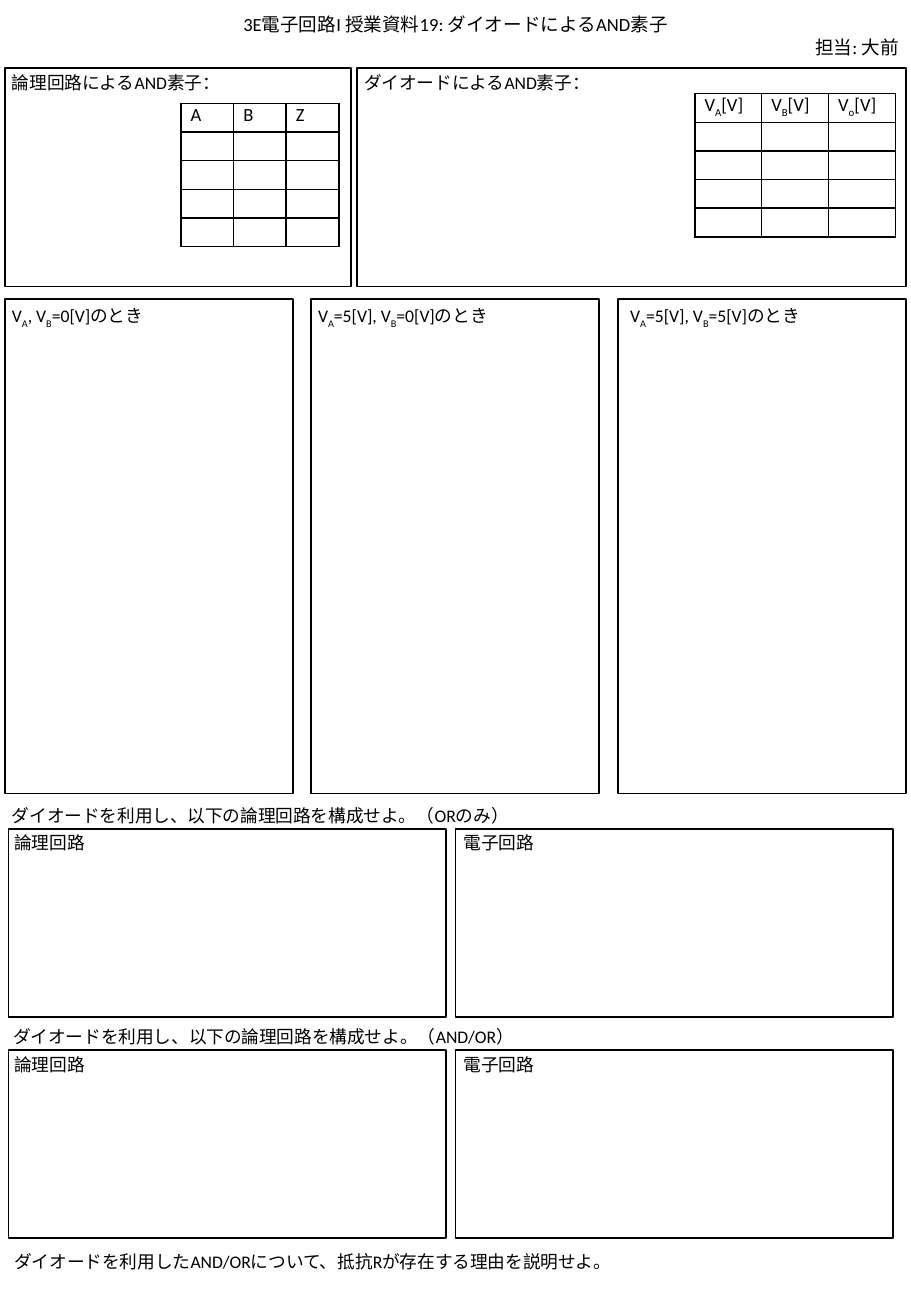
from lxml.etree import SubElement
from pptx import Presentation
from pptx.dml.color import RGBColor
from pptx.enum.shapes import MSO_SHAPE as Shape
from pptx.enum.text import MSO_ANCHOR as Anchor, MSO_AUTO_SIZE as Fit, PP_ALIGN as Align
from pptx.oxml.ns import qn
from pptx.util import Inches, Pt

WIDE, HIGH = 7.5, 10.83
FONT, INK, PAPER = "Calibri", "000000", "FFFFFF"

# Text between bars is subscript.
TITLE = ["3E電子回路I 授業資料19: ダイオードによるAND素子", "担当: 大前"]
# Panels: left, width, label, label left
GATES = [
    (0.04, 2.85, "論理回路によるAND素子：", 0),
    (2.94, 4.52, "ダイオードによるAND素子：", 2.9),
]
CASES = [
    (0.04, 2.37, "V|A|, V|B|=0[V]のとき", 0),
    (2.56, 2.37, "V|A|=5[V], V|B|=0[V]のとき", 2.52),
    (5.09, 2.37, "V|A|=5[V], V|B|=5[V]のとき", 5.09),
]
TASK = [
    (0.07, 3.6, "論理回路", 0.02),
    (3.75, 3.6, "電子回路", 3.72),
]
# Rows of panels: top, height, label top, panels
BANDS = [
    (0.56, 1.8, 0.54, GATES),
    (2.46, 4.07, 2.46, CASES),
    (6.82, 1.55, 6.8, TASK),
    (8.64, 1.55, 8.62, TASK),
]
# Questions: left, top, width, text
ASKS = [
    (0, 6.57, 4.69, "ダイオードを利用し、以下の論理回路を構成せよ。（ORのみ）"),
    (0.01, 8.39, 4.69, "ダイオードを利用し、以下の論理回路を構成せよ。（AND/OR）"),
    (0.02, 10.24, 6.38, "ダイオードを利用したAND/ORについて、抵抗Rが存在する理由を説明せよ。"),
]
# Truth tables: left, top, width, heads
TABLES = [
    (1.49, 0.85, 1.3, ["A", "B", "Z"]),
    (5.72, 0.77, 1.65, ["V|A|[V]", "V|B|[V]", "V|o|[V]"]),
]
ROWS, ROW_H = 5, 0.236


def color(text):
    return RGBColor.from_string(text)


def write(para, text, size=10.5, align=Align.LEFT):
    para.alignment = align
    for i, part in enumerate(text.split("|")):
        run = para.add_run()
        run.text = part
        font = run.font
        font.name, font.size = FONT, Pt(size)
        font.color.rgb = color(INK)
        if i % 2:
            font._element.set("baseline", "-25000")


def label(slide, x, y, w, text):
    box = slide.shapes.add_textbox(*map(Inches, (x, y, w, 0.28)))
    frame = box.text_frame
    frame.word_wrap = True
    frame.auto_size = Fit.SHAPE_TO_FIT_TEXT
    write(frame.paragraphs[0], text)


def panel(slide, x, y, w, h):
    box = slide.shapes.add_shape(Shape.RECTANGLE, *map(Inches, (x, y, w, h)))
    box.shadow.inherit = False
    box.fill.solid()
    box.fill.fore_color.rgb = color(PAPER)
    box.line.color.rgb = color(INK)
    box.line.width = Pt(1)


def border(cell):
    props = cell._tc.get_or_add_tcPr()
    for side in ("lnL", "lnR", "lnT", "lnB"):
        line = SubElement(props, qn(f"a:{side}"), w=str(Pt(1)))
        fill = SubElement(line, qn("a:solidFill"))
        SubElement(fill, qn("a:srgbClr"), val=INK)


def truth(slide, x, y, w, heads):
    """Draw a table with a head row and empty rows to fill in."""
    size = map(Inches, (x, y, w, ROWS * ROW_H))
    table = slide.shapes.add_table(ROWS, len(heads), *size).table
    table.first_row = table.horz_banding = False
    for row in table.rows:
        row.height = Inches(ROW_H)
    for i, cell in enumerate(table.iter_cells()):
        cell.margin_left, cell.margin_right = Inches(0.08), Inches(0.1)
        cell.margin_top = cell.margin_bottom = 0
        border(cell)
        cell.fill.background()
        para = cell.text_frame.paragraphs[0]
        if i < len(heads):
            write(para, heads[i], size=11)
        else:
            SubElement(para._p, qn("a:endParaRPr"), sz="1100")


def head(slide):
    title = slide.shapes.title
    title.left, title.top = 0, Inches(0.06)
    title.width, title.height = Inches(WIDE), Inches(0.47)
    frame = title.text_frame
    frame.vertical_anchor = Anchor.TOP
    frame.word_wrap = True
    frame.auto_size = Fit.SHAPE_TO_FIT_TEXT
    write(frame.paragraphs[0], TITLE[0], size=11, align=Align.CENTER)
    write(frame.add_paragraph(), TITLE[1], size=11, align=Align.RIGHT)


def main():
    deck = Presentation()
    deck.slide_width, deck.slide_height = Inches(WIDE), Inches(HIGH)
    slide = deck.slides.add_slide(deck.slide_layouts[5])
    head(slide)
    for top, high, text_top, panels in BANDS:
        for x, w, text, text_x in panels:
            panel(slide, x, top, w, high)
            label(slide, text_x, text_top, 2.16, text)
    for ask in ASKS:
        label(slide, *ask)
    for table in TABLES:
        truth(slide, *table)
    deck.save("out.pptx")


if __name__ == "__main__":
    main()
